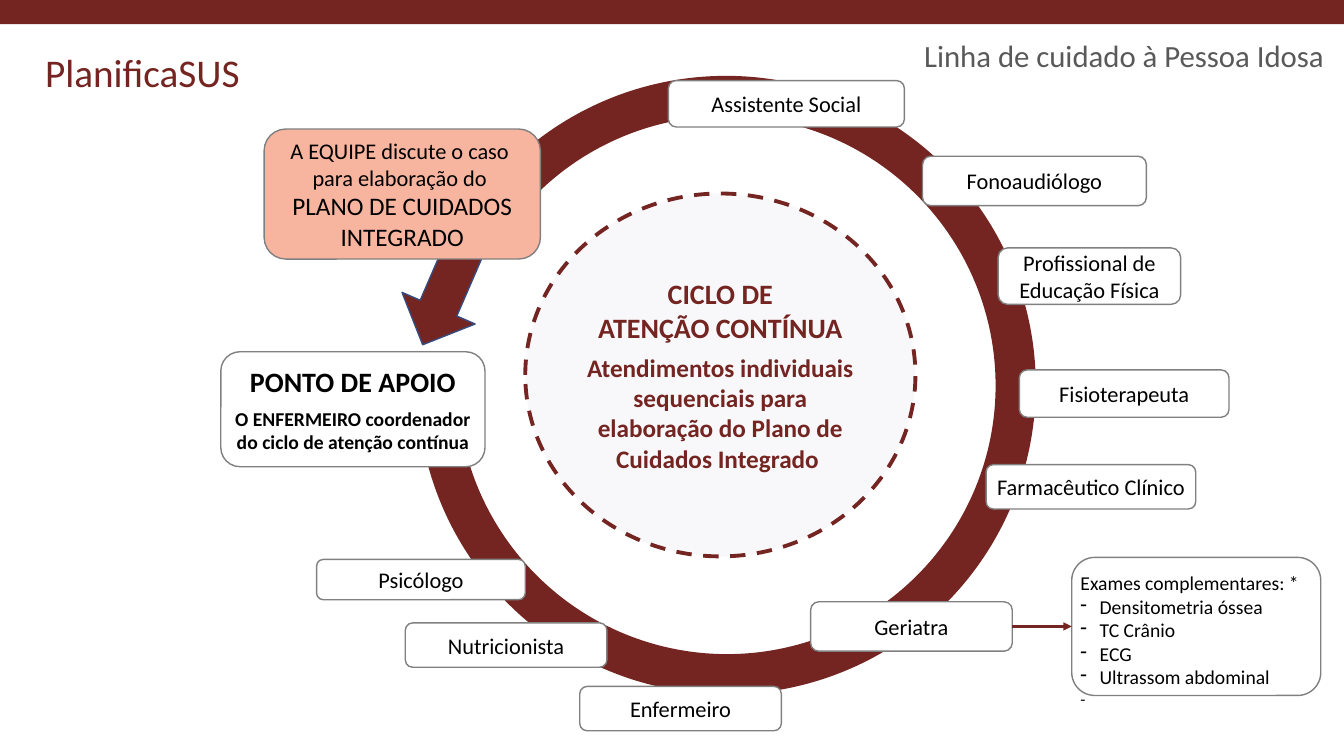
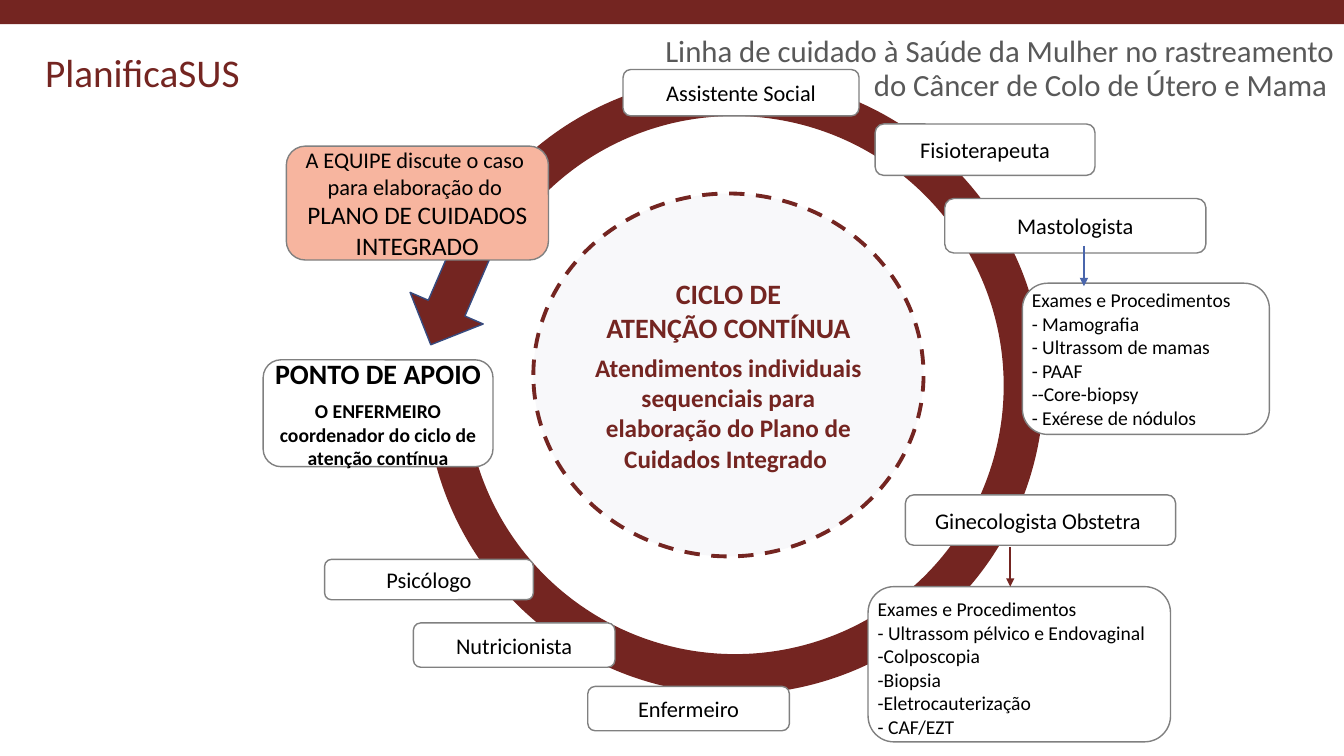
import pptx
import pptx.util
import pptx.dml.color
import pptx.enum.dml
import pptx.enum.shapes
import pptx.enum.text
import pptx.oxml.ns
from lxml import etree

Inches = pptx.util.Inches
Pt = pptx.util.Pt
SHAPE = pptx.enum.shapes.MSO_SHAPE
ALIGN = pptx.enum.text.PP_ALIGN
ANCHOR = pptx.enum.text.MSO_ANCHOR
qn = pptx.oxml.ns.qn

FONT = "Calibri"
HUES = {
    "wine": "742521", "grey": "808080", "title": "595959", "black": "000000",
    "white": "FFFFFF", "pale": "F8F8FA", "peach": "F7B59F",
    "navy": "374B7F", "blue": "4A66AC",
}
COLOR = {name: pptx.dml.color.RGBColor.from_string(h) for name, h in HUES.items()}


def draw(slide, kind, rect, fill, line=None, width=1):
    """Add a preset shape with plain fill and outline."""
    shape = slide.shapes.add_shape(kind, *map(Inches, rect))
    shape.shadow.inherit = False
    shape.fill.solid()
    shape.fill.fore_color.rgb = COLOR[fill]
    if line:
        shape.line.color.rgb = COLOR[line]
        shape.line.width = Pt(width)
    else:
        shape.line.fill.background()
    return shape


def write(shape, lines, color="black", bold=False, align=ALIGN.CENTER, inset=0.02):
    """Fill a shape with (text, size, space before) lines; a tab marks a dash bullet."""
    frame = shape.text_frame
    frame.word_wrap = True
    frame.vertical_anchor = ANCHOR.MIDDLE
    frame.margin_left = frame.margin_right = Inches(inset)
    frame.margin_top = frame.margin_bottom = Inches(inset)
    for i, (text, size, gap) in enumerate(lines):
        para = frame.paragraphs[0] if i == 0 else frame.add_paragraph()
        para.text = text.lstrip("\t")
        para.alignment = align
        if gap:
            para.space_before = Pt(gap)
        if text.startswith("\t"):
            props = para._p.get_or_add_pPr()
            props.set("marL", str(Inches(0.19)))
            props.set("indent", str(-Inches(0.19)))
            etree.SubElement(props, qn("a:buChar")).set("char", "-")
        para.font.name = FONT
        para.font.size = Pt(size)
        para.font.bold = bold
        para.font.color.rgb = COLOR[color]


# Text that both slides share
CYCLE = [
    ("CICLO DE", 20, 0),
    ("ATENÇÃO CONTÍNUA", 20, 0),
    ("Atendimentos individuais sequenciais para elaboração do Plano de "
     "Cuidados Integrado ", 18, 6),
]
POINT = [
    ("PONTO DE APOIO", 20, 0),
    ("O ENFERMEIRO coordenador do ciclo de atenção contínua", 14, 6),
]
TEAM = [
    ("A EQUIPE discute o caso ", 16, 0),
    ("para elaboração do ", 16, 0),
    ("PLANO DE CUIDADOS", 18, 0),
    ("INTEGRADO", 18, 0),
]
STAFF = {
    "Enfermeiro": (5.75, 6.81, 2, 0.44),
    "Psicólogo": (3.14, 5.55, 2.07, 0.4),
    "Nutricionista": (4.02, 6.18, 2, 0.44),
}

# What differs: shift moves the ring; exams hold place, top inset and lines
PAGES = [
    {
        "title": "Linha de cuidado à Pessoa Idosa",
        "place": (8.45, 0.25, 4.78, 0.64),
        "shift": 0,
        "point": (2.19, 3.49, 2.62, 1.14),
        "team": (2.62, 1.28, 2.74, 1.29),
        "staff": {
            "Assistente Social": (6.63, 0.8, 2.34, 0.46),
            "Fonoaudiólogo": (9.15, 1.55, 2.22, 0.49),
            "Profissional de Educação Física": (9.9, 2.46, 1.81, 0.56),
            "Fisioterapeuta": (10.11, 3.67, 2.08, 0.47),
            "Farmacêutico Clínico": (9.78, 4.61, 2.08, 0.44),
            "Geriatra": (8.04, 5.97, 2, 0.49),
        },
        "exams": [
            ((10.63, 5.53, 2.47, 1.37), 0.07, [
                ("Exames complementares: *", 14, 0),
                ("\tDensitometria óssea", 14, 0),
                ("\tTC Crânio", 14, 0),
                ("\tECG", 14, 0),
                ("\tUltrassom abdominal", 14, 0),
                ("-", 12, 0),
            ]),
        ],
        "arrows": [((10.04, 6.21), (10.63, 6.21), "wine")],
        "join": "Geriatra",
    },
    {
        "title": "Linha de cuidado à Saúde da Mulher no rastreamento "
                 "do Câncer de Colo de Útero e Mama ",
        "place": (6.35, 0.37, 6.98, 0.64),
        "shift": 0.08,
        "point": (2.61, 3.57, 2.28, 1.06),
        "team": (2.84, 1.45, 2.6, 1.13),
        "staff": {
            "Assistente Social": (6.18, 0.69, 2.34, 0.46),
            "Fisioterapeuta": (8.68, 1.23, 2.18, 0.51),
            "Mastologista": (9.37, 1.97, 2.59, 0.54),
            "Ginecologista Obstetra ": (8.98, 4.91, 2.68, 0.5),
        },
        "exams": [
            ((8.61, 5.82, 3, 1.54), 0.03, [
                ("Exames e Procedimentos", 14, 0),
                ("- Ultrassom pélvico e Endovaginal", 14, 0),
                ("-Colposcopia", 14, 0),
                ("-Biopsia", 14, 0),
                ("-Eletrocauterização", 14, 0),
                ("- CAF/EZT", 14, 0),
            ]),
            ((10.14, 2.81, 2.45, 1.5), None, [
                ("Exames e Procedimentos", 14, 0),
                ("- Mamografia", 14, 0),
                ("- Ultrassom de mamas", 14, 0),
                ("- PAAF", 14, 0),
                ("--Core-biopsy", 14, 0),
                ("- Exérese de nódulos", 14, 0),
            ]),
        ],
        "arrows": [
            ((10.02, 5.43), (10.02, 5.82), "wine"),
            ((10.75, 2.44), (10.75, 2.84), "blue"),
        ],
        "join": None,
    },
]

deck = pptx.Presentation()
deck.slide_width = Inches(13.33)
deck.slide_height = Inches(7.5)

for page in PAGES:
    slide = deck.slides.add_slide(deck.slide_layouts[6])
    shift = page["shift"]

    # Top band and programme name
    draw(slide, SHAPE.RECTANGLE, (0, 0, 13.33, 0.24), "wine")
    name = slide.shapes.add_textbox(*map(Inches, (0.35, 0.43, 2.15, 0.57)))
    write(name, [("PlanificaSUS", 28, 0)], "wine", align=ALIGN.LEFT, inset=0.1)
    name.text_frame.word_wrap = False

    # Ring and centre
    ring = draw(slide, SHAPE.BLOCK_ARC, (4.14 + shift, 0.75, 6.13, 6.14), "wine")
    ring.rotation = 136.7
    for i, value in enumerate((44.48, 18.94, 0.065)):
        ring.adjustments[i] = value
    core = draw(slide, SHAPE.OVAL, (5.21 + shift, 1.92, 3.87, 3.6),
                "pale", "wine", 2.75)
    core.line.dash_style = pptx.enum.dml.MSO_LINE.DASH
    write(core, CYCLE, "wine", bold=True)

    # Professionals around the ring
    staff = {role: (x + shift, y, w, h) for role, (x, y, w, h) in STAFF.items()}
    staff.update(page["staff"])
    cards = {}
    for role, rect in staff.items():
        cards[role] = draw(slide, SHAPE.ROUNDED_RECTANGLE, rect, "white", "grey")
        write(cards[role], [(role, 16, 0)])

    # Title
    title = slide.shapes.add_textbox(*map(Inches, page["place"]))
    write(title, [(page["title"], 22, 0)], "title", align=ALIGN.RIGHT, inset=0.1)
    title.text_frame.margin_top = title.text_frame.margin_bottom = Inches(0.05)
    title.text_frame.paragraphs[0].line_spacing = 0.9

    # Support point, arrow and team
    point = draw(slide, SHAPE.ROUNDED_RECTANGLE, page["point"], "white", "grey")
    write(point, POINT, bold=True)
    head = draw(slide, SHAPE.DOWN_ARROW, (4.04 + shift, 2.25, 0.79, 1.22),
                "wine", "navy")
    head.rotation = 23.4
    team = draw(slide, SHAPE.ROUNDED_RECTANGLE, page["team"], "peach", "grey")
    write(team, TEAM)

    # Exam lists
    for rect, top, lines in page["exams"]:
        exam = draw(slide, SHAPE.ROUNDED_RECTANGLE, rect, "white", "grey")
        write(exam, lines, align=ALIGN.LEFT)
        if top is not None:
            exam.text_frame.vertical_anchor = ANCHOR.TOP
            exam.text_frame.margin_top = Inches(top)

    # Arrows to the exam lists
    for start, end, color in page["arrows"]:
        link = slide.shapes.add_connector(
            pptx.enum.shapes.MSO_CONNECTOR.STRAIGHT, *map(Inches, start + end))
        link.line.color.rgb = COLOR[color]
        link.line.width = Pt(1.75)
        etree.SubElement(link.line._get_or_add_ln(), qn("a:tailEnd")).set(
            "type", "triangle")
        etree.SubElement(link._element.spPr, qn("a:effectLst"))
        if page["join"]:
            link.begin_connect(cards[page["join"]], 3)
            link.end_connect(exam, 1)

deck.save("out.pptx")
